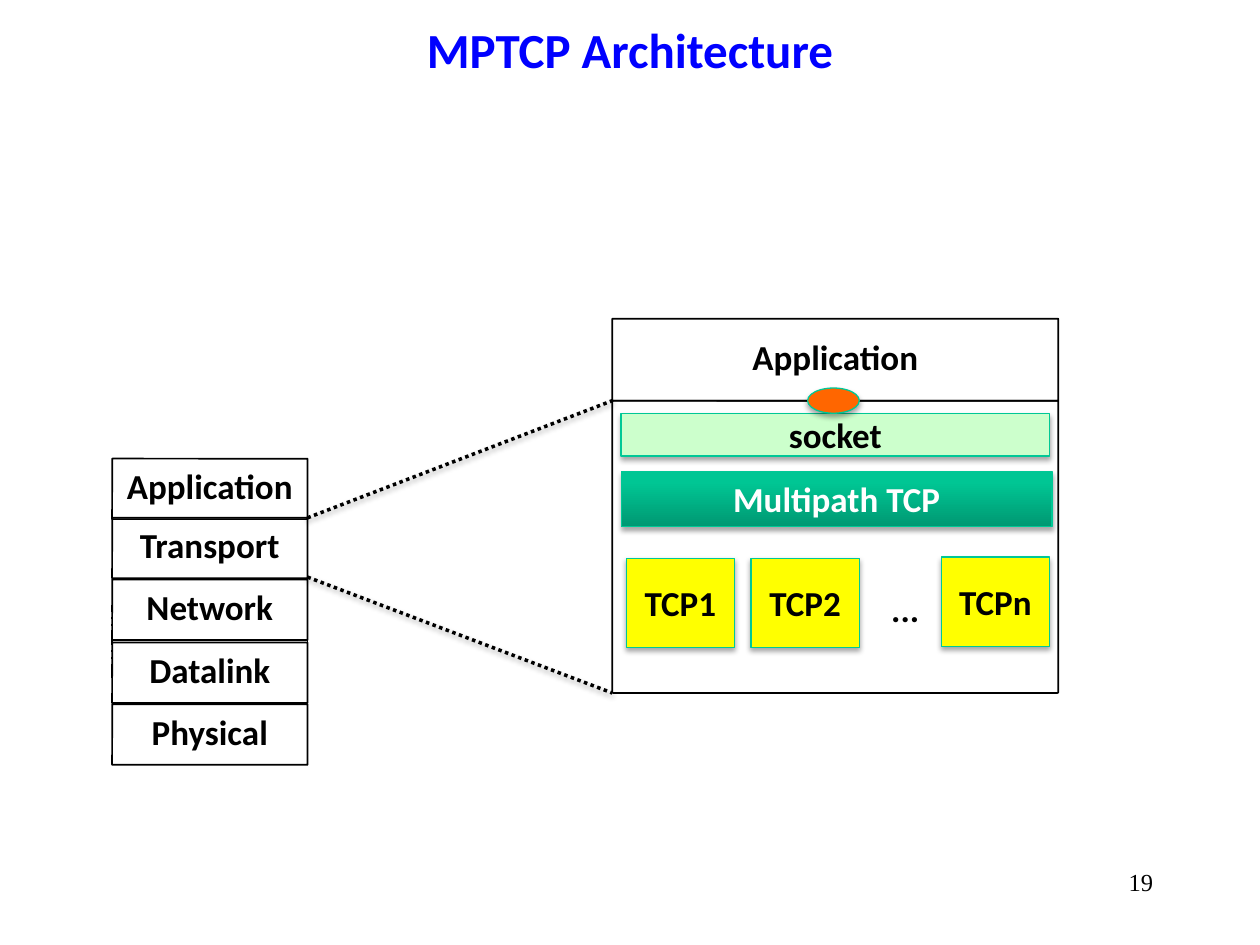
from pptx import Presentation
from pptx.dml.color import RGBColor
from pptx.enum.dml import MSO_LINE
from pptx.enum.shapes import MSO_CONNECTOR, MSO_SHAPE
from pptx.enum.text import MSO_ANCHOR, PP_ALIGN
from pptx.oxml import parse_xml
from pptx.oxml.ns import nsdecls, qn
from pptx.util import Inches, Pt

RECT, ROUNDED, OVAL = MSO_SHAPE.RECTANGLE, MSO_SHAPE.ROUNDED_RECTANGLE, MSO_SHAPE.OVAL
CENTER, RIGHT = PP_ALIGN.CENTER, PP_ALIGN.RIGHT
TOP, MIDDLE = MSO_ANCHOR.TOP, MSO_ANCHOR.MIDDLE
DOTTED, DASH_DOT_DOT = MSO_LINE.ROUND_DOT, MSO_LINE.DASH_DOT_DOT

# Content
TITLE = "MPTCP Architecture"
PAGE_NUMBER = "19"
LAYERS = [("Application", 3.64), ("Transport", 4.11), ("Network", 4.6),
          ("Datalink", 5.1), ("Physical", 5.59)]
SUBFLOWS = [("TCP1", 4.97, 4.43), ("TCP2", 5.96, 4.43), ("TCPn", 7.47, 4.42)]


class Theme:
    font, number_font = "Calibri", "Times New Roman"
    title_size, label_size, number_size = 28, 20, 14
    title, ink, white = "0000FF", "000000", "FFFFFF"
    edge, subflow, socket, port = "00C896", "FFFF00", "CCFFCC", "FF6600"
    multipath = [(0, "009872"), (80, "00C694"), (100, "00C795")]


# Layout
STACK_LEFT, STACK_WIDTH, LAYER_HEIGHT = 0.89, 1.55, 0.48
STACK_RIGHT = STACK_LEFT + STACK_WIDTH
DETAIL_LEFT, DETAIL_WIDTH = 4.86, 3.54
APP_TOP, DETAIL_TOP, DETAIL_BOTTOM = 2.53, 3.18, 5.5
INNER_LEFT = 4.93
SUBFLOW_WIDTH, SUBFLOW_HEIGHT = 0.86, 0.71


def write(shape, text, *, size=Theme.label_size, color=Theme.ink, font=Theme.font,
          bold=True, align=CENTER, anchor=MIDDLE, spacing=None, inset=None, wrap=True):
    frame = shape.text_frame
    frame.word_wrap = wrap
    frame.vertical_anchor = anchor
    if inset is not None:
        frame.margin_left = frame.margin_right = Inches(inset)
        frame.margin_top = frame.margin_bottom = Inches(inset)
    para = frame.paragraphs[0]
    para.alignment = align
    if spacing:
        para.line_spacing = spacing
    span = para.add_run()
    span.text = text
    span.font.size = Pt(size)
    span.font.name = font
    span.font.bold = bold
    span.font.color.rgb = RGBColor.from_string(color)


def set_shadow(properties, opacity=0, distance=1.8):
    """Replace the inherited effects; an opacity of 0 leaves no shadow."""
    for old in properties.findall(qn("a:effectLst")):
        properties.remove(old)
    drop = (f'<a:outerShdw blurRad="{Pt(3.1)}" dist="{Pt(distance)}" dir="5400000" '
            f'rotWithShape="0"><a:srgbClr val="{Theme.ink}">'
            f'<a:alpha val="{opacity * 1000}"/></a:srgbClr></a:outerShdw>') if opacity else ""
    properties.append(parse_xml(f'<a:effectLst {nsdecls("a")}>{drop}</a:effectLst>'))


def add_box(page, kind, left, top, width, height, fill=None, line=Theme.edge,
            weight=0.75, shadow=35):
    box = page.shapes.add_shape(kind, Inches(left), Inches(top), Inches(width), Inches(height))
    if fill:
        box.fill.solid()
        box.fill.fore_color.rgb = RGBColor.from_string(fill)
    else:
        box.fill.background()
    box.line.color.rgb = RGBColor.from_string(line)
    box.line.width = Pt(weight)
    set_shadow(box._element.spPr, shadow)
    return box


def add_frame(page, left, top, width, height, label=None):
    frame = add_box(page, ROUNDED, left, top, width, height, line=Theme.ink, weight=1, shadow=0)
    frame.adjustments[0] = 0.004
    if label:
        write(frame, label, spacing=0.84, inset=0)


def add_line(page, start, end, weight, dash, shadow=0):
    line = page.shapes.add_connector(MSO_CONNECTOR.STRAIGHT, *map(Inches, start + end))
    line.line.color.rgb = RGBColor.from_string(Theme.ink)
    line.line.width = Pt(weight)
    line.line.dash_style = dash
    set_shadow(line._element.spPr, shadow, distance=1.6)


def add_text(page, left, top, width, height, text, **style):
    box = page.shapes.add_textbox(Inches(left), Inches(top), Inches(width), Inches(height))
    write(box, text, **style)


def fill_gradient(box, stops, angle):
    box.fill.gradient()
    box.fill.gradient_angle = angle
    stop_list = box._element.spPr.find(".//" + qn("a:gsLst"))
    for old in list(stop_list):
        stop_list.remove(old)
    for position, color in stops:
        stop_list.append(parse_xml(f'<a:gs {nsdecls("a")} pos="{position * 1000}">'
                                   f'<a:srgbClr val="{color}"/></a:gs>'))


def main():
    deck = Presentation()
    deck.slide_width, deck.slide_height = Inches(10), Inches(7.5)
    page = deck.slides.add_slide(deck.slide_layouts[6])

    add_text(page, 0.75, -0.24, 8.5, 1.25, TITLE, size=Theme.title_size, color=Theme.title)

    # Protocol stack, with dashed marks along both sides
    for name, top in reversed(LAYERS):
        add_frame(page, STACK_LEFT, top, STACK_WIDTH, LAYER_HEIGHT, name)
    for x in (STACK_LEFT, STACK_RIGHT):
        add_line(page, (x, 5.38), (x, 4.8), 1, DASH_DOT_DOT)

    # Transport layer in detail
    add_frame(page, DETAIL_LEFT, DETAIL_TOP, DETAIL_WIDTH, DETAIL_BOTTOM - DETAIL_TOP)
    multipath = add_box(page, RECT, INNER_LEFT, 3.74, 3.42, 0.44)
    fill_gradient(multipath, Theme.multipath, 90)
    write(multipath, "Multipath TCP", color=Theme.white)
    socket = add_box(page, RECT, INNER_LEFT, 3.28, 3.4, 0.34, Theme.socket)
    write(socket, "socket")
    for name, left, top in SUBFLOWS:
        subflow = add_box(page, RECT, left, top, SUBFLOW_WIDTH, SUBFLOW_HEIGHT, Theme.subflow)
        write(subflow, name)
    add_text(page, 6.97, 4.61, 0.43, 0.44, "...", anchor=TOP, wrap=False)

    # Application above it, joined by a port
    add_frame(page, DETAIL_LEFT, APP_TOP, DETAIL_WIDTH, DETAIL_TOP - APP_TOP, "Application")
    add_box(page, OVAL, 6.41, 3.08, 0.41, 0.2, Theme.port)

    # Zoom lines from the transport layer to its detail
    for start, end in ((4.11, DETAIL_TOP), (4.58, DETAIL_BOTTOM)):
        add_line(page, (STACK_RIGHT, start), (DETAIL_LEFT, end), 2, DOTTED, shadow=38)

    add_text(page, 7.17, 6.83, 2.08, 0.5, PAGE_NUMBER, size=Theme.number_size,
             font=Theme.number_font, bold=False, align=RIGHT, anchor=TOP)

    deck.save("out.pptx")


if __name__ == "__main__":
    main()
